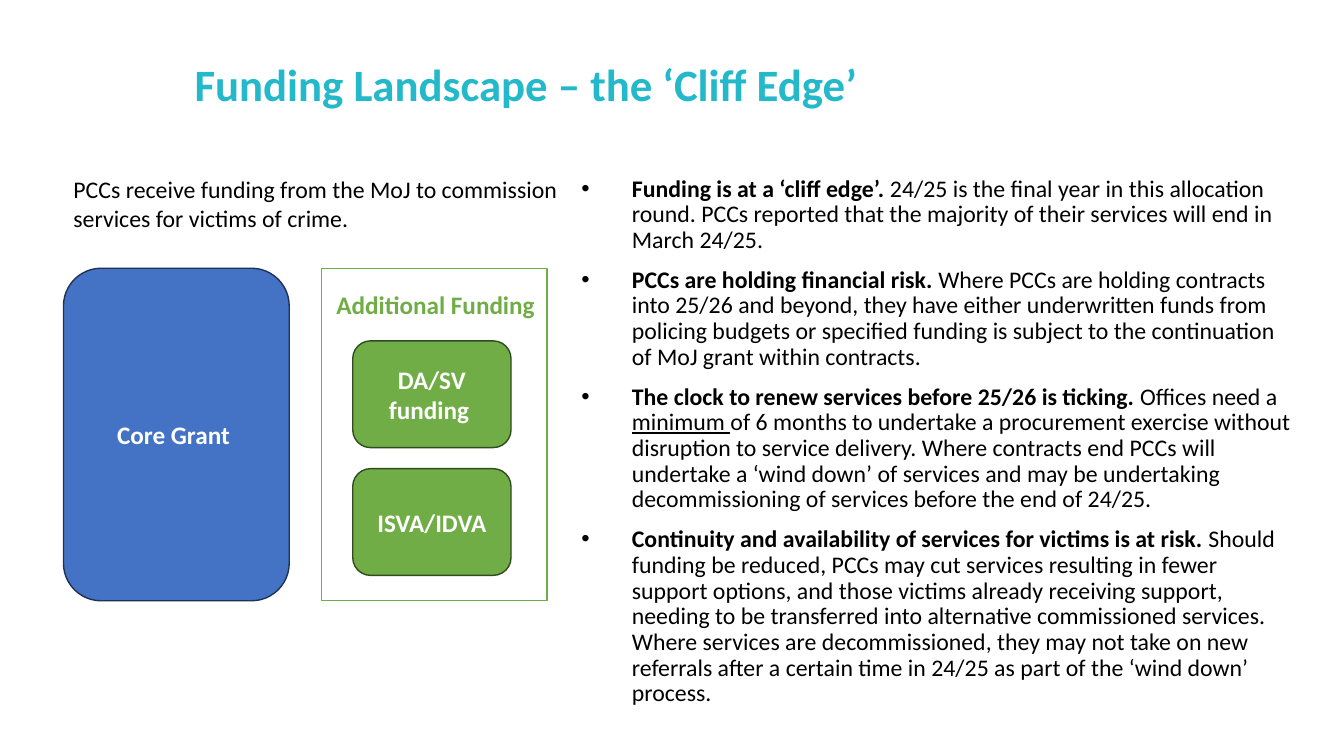
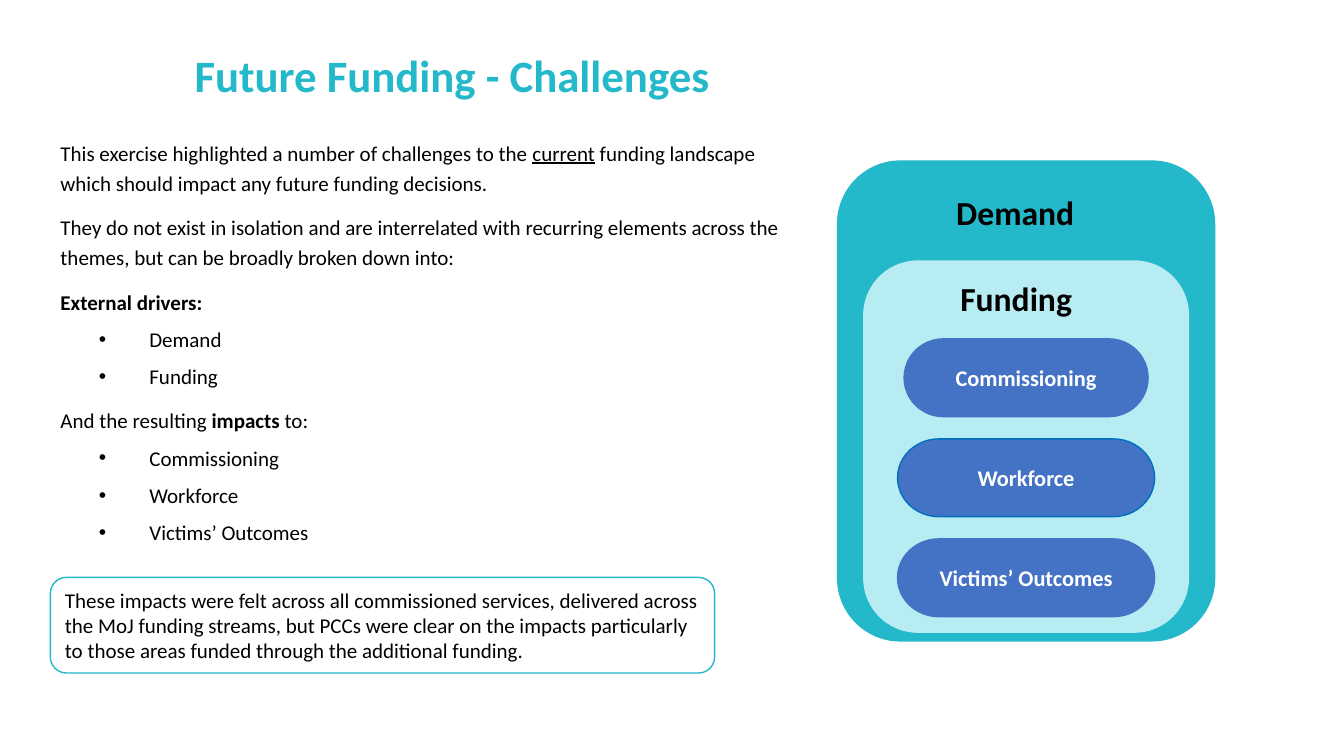
"""Build two slides on the funding landscape and the challenges to future funding."""
from lxml.etree import SubElement
from pptx import Presentation
from pptx.dml.color import RGBColor
from pptx.enum.shapes import MSO_SHAPE as Preset
from pptx.enum.text import MSO_ANCHOR as Anchor, MSO_AUTO_SIZE as AutoSize, PP_ALIGN as Align
from pptx.oxml.ns import qn
from pptx.util import Cm, Pt

TEAL = RGBColor(0x23, 0xB8, 0xCA)
PALE_TEAL = RGBColor(0xB7, 0xEC, 0xF3)
BLUE = RGBColor(0x44, 0x72, 0xC4)
NAVY = RGBColor(0x1E, 0x32, 0x56)
BRIGHT_BLUE = RGBColor(0x00, 0x70, 0xC0)
GREEN = RGBColor(0x70, 0xAD, 0x47)
DARK_GREEN = RGBColor(0x31, 0x4C, 0x1F)
BLACK = RGBColor(0x00, 0x00, 0x00)
WHITE = RGBColor(0xFF, 0xFF, 0xFF)
FONT = "Calibri"


def add_runs(paragraph, runs, size, color):
    """Add (text, style) runs, where style is "bold", "underline" or empty."""
    for text, style in runs:
        run = paragraph.add_run()
        run.text = text
        run.font.name = FONT
        run.font.size = Pt(size)
        run.font.color.rgb = color
        run.font.bold = style == "bold"
        run.font.underline = style == "underline"


def add_box(slide, preset, place, fill=None, line=None, text="", size=18,
            color=WHITE, style="bold", align=Align.CENTER):
    """Add a preset shape, or a text box when preset is None, at a place in cm."""
    lengths = [Cm(length) for length in place]
    if preset is None:
        shape = slide.shapes.add_textbox(*lengths)
    else:
        shape = slide.shapes.add_shape(preset, *lengths)
        shape.shadow.inherit = False
        if fill is None:
            shape.fill.background()
        else:
            shape.fill.solid()
            shape.fill.fore_color.rgb = fill
        shape.line.color.rgb = line
        shape.line.width = Pt(1)
    if text:
        frame = shape.text_frame
        frame.word_wrap = True
        frame.vertical_anchor = Anchor.TOP if preset is None else Anchor.MIDDLE
        frame.paragraphs[0].alignment = align
        add_runs(frame.paragraphs[0], [(text, style)], size, color)


presentation = Presentation()
presentation.slide_width = Cm(33.87)
presentation.slide_height = Cm(19.05)

landscape_points = [
    (0, True, [
        ("Funding is at a ‘cliff edge’. ", "bold"),
        ("24/25 is the final year in this allocation round. PCCs reported that the "
         "majority of their services will end in March 24/25.", "")]),
    (0, True, [
        ("PCCs are holding financial risk. ", "bold"),
        ("Where PCCs are holding contracts into 25/26 and beyond, they have either "
         "underwritten funds from policing budgets or specified funding is subject to "
         "the continuation of MoJ grant within contracts.", "")]),
    (0, True, [
        ("The clock to renew services before 25/26 is ticking. ", "bold"),
        ("Offices need a ", ""),
        ("minimum ", "underline"),
        ("of 6 months to undertake a procurement exercise without disruption to service "
         "delivery. Where contracts end PCCs will undertake a ‘wind down’ of services and "
         "may be undertaking decommissioning of services before the end of 24/25.", "")]),
    (0, True, [
        ("Continuity and availability of services for victims is at risk. ", "bold"),
        ("Should funding be reduced, PCCs may cut services resulting in fewer support "
         "options, and those victims already receiving support, needing to be transferred "
         "into alternative commissioned services. Where services are decommissioned, they "
         "may not take on new referrals after a certain time in 24/25 as part of the "
         "‘wind down’ process.", "")]),
]
challenge_points = [
    (0, False, [
        ("This exercise highlighted a number of challenges to the ", ""),
        ("current", "underline"),
        (" funding landscape which should impact any future funding decisions.", "")]),
    (0, False, [
        ("They do not exist in isolation and are interrelated with recurring elements "
         "across the themes, but can be broadly broken down into:", "")]),
    (0, False, [("External drivers:", "bold")]),
    (1, True, [("Demand", "")]),
    (1, True, [("Funding", "")]),
    (0, False, [("And the resulting ", ""), ("impacts", "bold"), (" to:", "")]),
    (1, True, [("Commissioning", "")]),
    (1, True, [("Workforce", "")]),
    (1, True, [("Victims’ Outcomes", "")]),
]
slide_contents = [
    ("Funding Landscape – the ‘Cliff Edge’", 1.02, (14.4, 4.32, 18.52, 13.23),
     17, 0.9, landscape_points),
    ("Future Funding - Challenges", 0.79, (1.27, 3.28, 18.77, 10.92),
     15, 1.2, challenge_points),
]

for heading, title_top, body_place, size, spacing, points in slide_contents:
    slide = presentation.slides.add_slide(presentation.slide_layouts[1])
    title = slide.shapes.title
    title.left, title.top, title.width, title.height = Cm(4.65), Cm(title_top), Cm(29.21), Cm(2.34)
    title.text_frame.vertical_anchor = Anchor.MIDDLE
    title.text_frame.auto_size = AutoSize.NONE
    paragraph = title.text_frame.paragraphs[0]
    paragraph.alignment = Align.LEFT
    paragraph.line_spacing = 0.9
    add_runs(paragraph, [(heading, "bold")], 32, TEAL)

    body = slide.placeholders[1]
    body.left, body.top, body.width, body.height = [Cm(length) for length in body_place]
    frame = body.text_frame
    frame.auto_size = AutoSize.NONE
    for index, (level, bulleted, runs) in enumerate(points):
        paragraph = frame.add_paragraph() if index else frame.paragraphs[0]
        properties = paragraph._p.get_or_add_pPr()
        if bulleted:
            properties.set("marL", str(Cm(2.24 if level else 1.27)))
            properties.set("indent", str(-Cm(1.27)))
            SubElement(properties, qn("a:buFont")).set("typeface", "Arial")
            SubElement(properties, qn("a:buChar")).set("char", "•")
        else:
            properties.set("marL", "0")
            properties.set("indent", "0")
            SubElement(properties, qn("a:buNone"))
        paragraph.level = level
        paragraph.line_spacing = spacing
        paragraph.space_before = Pt((5 if level else 10) if index else 0)
        add_runs(paragraph, runs, size, BLACK)

landscape, challenges = presentation.slides

add_box(landscape, Preset.RECTANGLE, (8.1, 6.76, 5.69, 8.38), line=GREEN)
add_box(landscape, Preset.ROUNDED_RECTANGLE, (1.6, 6.76, 5.69, 8.38), BLUE, NAVY, "Core Grant ")
for row, label in enumerate(["DA/SV funding ", "ISVA/IDVA"]):
    add_box(landscape, Preset.ROUNDED_RECTANGLE, (8.89, 8.59 + row * 3.22, 3.99, 2.69),
            GREEN, DARK_GREEN, label)
add_box(landscape, None, (8.23, 7.16, 5.69, 1.02), text="Additional Funding",
        color=GREEN, align=Align.LEFT)
add_box(landscape, None, (1.6, 4.29, 12.75, 1.7),
        text="PCCs receive funding from the MoJ to commission services for victims of crime.",
        size=17, color=BLACK, style="", align=Align.LEFT)

add_box(challenges, Preset.ROUNDED_RECTANGLE, (21.11, 4.06, 9.5, 12.09), TEAL, TEAL)
add_box(challenges, Preset.ROUNDED_RECTANGLE, (21.77, 6.58, 8.18, 9.35), PALE_TEAL, PALE_TEAL)
for label, left, top, width in [("Demand", 22.56, 4.72, 6.05), ("Funding ", 22.81, 6.88, 5.79)]:
    add_box(challenges, None, (left, top, width, 1.27), text=label, size=24, color=BLACK)
impacts = [("Commissioning", 6.15, BLUE), ("Workforce", 6.48, BRIGHT_BLUE),
           ("Victims’ Outcomes", 6.48, BLUE)]
for row, (label, width, outline) in enumerate(impacts):
    add_box(challenges, Preset.FLOWCHART_TERMINATOR,
            (25.86 - width / 2, 8.54 + row * 2.52, width, 1.96), BLUE, outline, label, size=16)
add_box(challenges, Preset.ROUNDED_RECTANGLE, (1.27, 14.55, 16.74, 2.41), line=TEAL,
        text="These impacts were felt across all commissioned services, delivered across the "
             "MoJ funding streams, but PCCs were clear on the impacts particularly to those "
             "areas funded through the additional funding.",
        size=15, color=BLACK, style="", align=Align.LEFT)

presentation.save("out.pptx")
